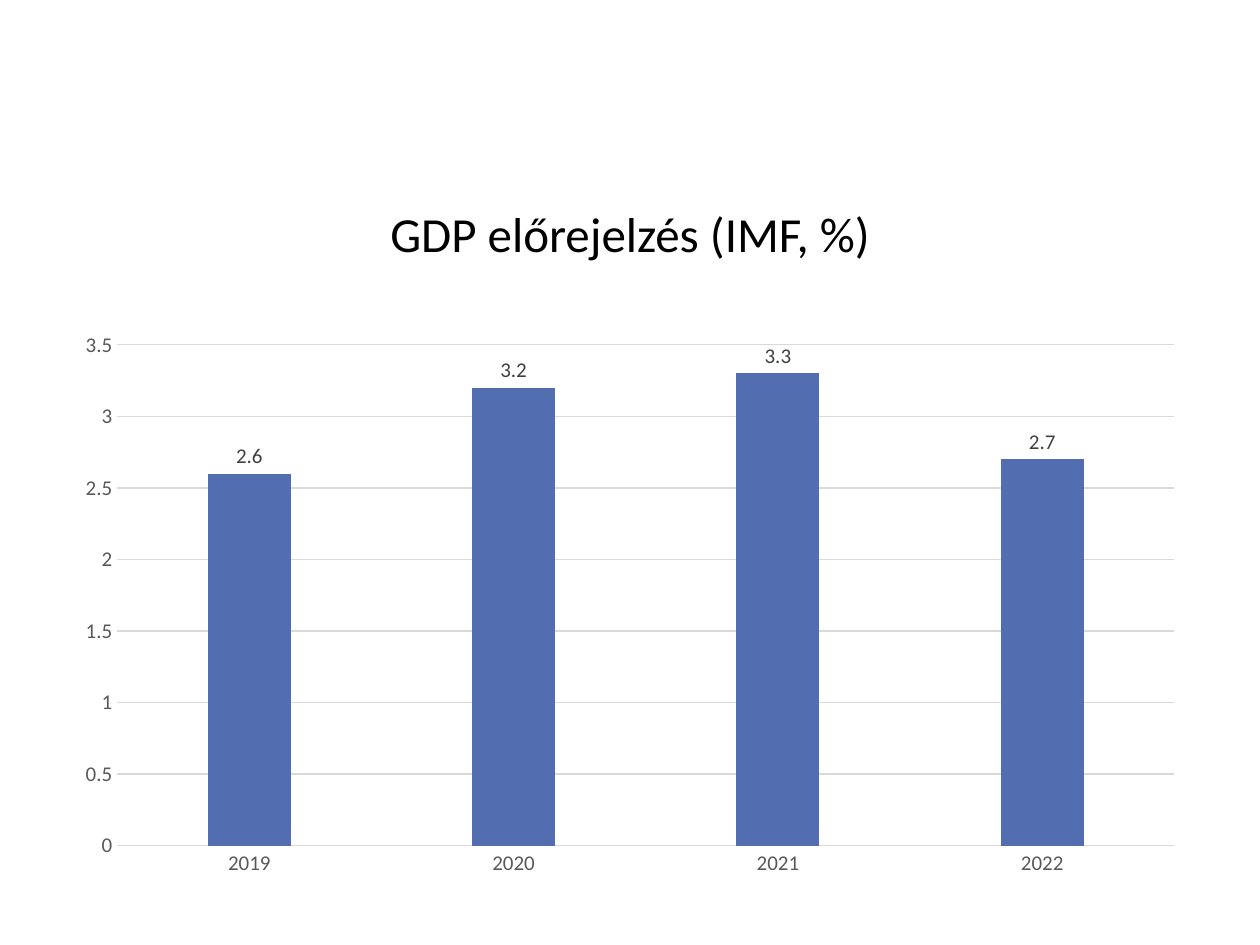
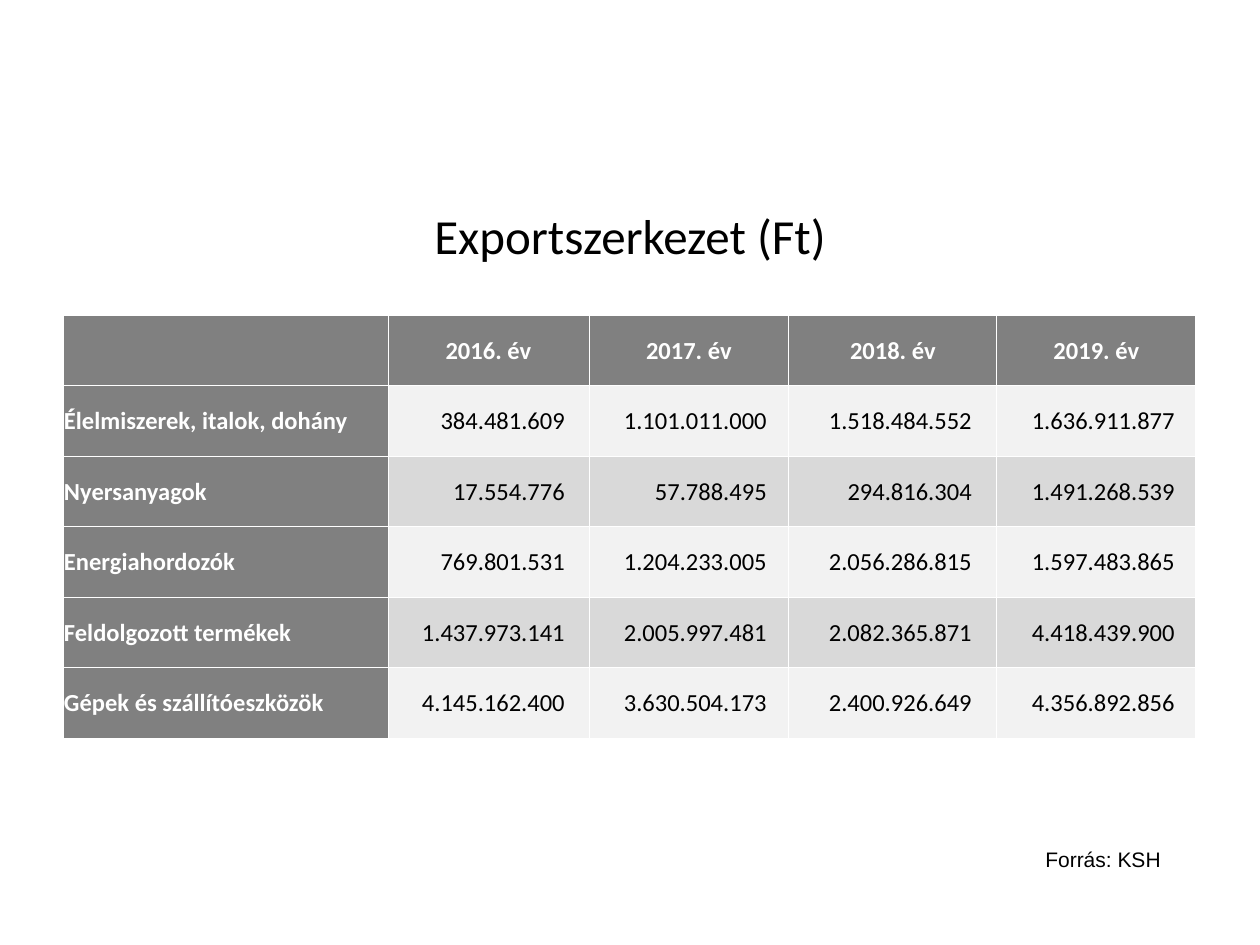
from lxml import etree
from pptx import Presentation, util as u
from pptx.chart.data import CategoryChartData
from pptx.dml.color import RGBColor
from pptx.enum import chart as ch, text
from pptx.oxml import ns

PX_PER_INCH = 126
BLACK = RGBColor(0x00, 0x00, 0x00)
WHITE = RGBColor(0xFF, 0xFF, 0xFF)
HEADER_GRAY = RGBColor(0x80, 0x80, 0x80)
LIGHT_BAND = RGBColor(0xF2, 0xF2, 0xF2)
DARK_BAND = RGBColor(0xD9, 0xD9, 0xD9)
GRID_GRAY = RGBColor(0xD9, 0xD9, 0xD9)
AXIS_GRAY = RGBColor(0x59, 0x59, 0x59)
LABEL_GRAY = RGBColor(0x40, 0x40, 0x40)
BAR_BLUE = RGBColor(0x52, 0x6D, 0xB0)
BODY_FONT = "Calibri"
SOURCE_FONT = "Arial"

GDP_FORECAST = {"2019": 2.6, "2020": 3.2, "2021": 3.3, "2022": 2.7}

EXPORT_YEARS = ["2016. év", "2017. év", "2018. év", "2019. év"]
EXPORTS = [
    ("Élelmiszerek, italok, dohány",
     "384.481.609", "1.101.011.000", "1.518.484.552", "1.636.911.877"),
    ("Nyersanyagok",
     "17.554.776", "57.788.495", "294.816.304", "1.491.268.539"),
    ("Energiahordozók",
     "769.801.531", "1.204.233.005", "2.056.286.815", "1.597.483.865"),
    ("Feldolgozott termékek",
     "1.437.973.141", "2.005.997.481", "2.082.365.871", "4.418.439.900"),
    ("Gépek és szállítóeszközök",
     "4.145.162.400", "3.630.504.173", "2.400.926.649", "4.356.892.856"),
]
COLUMN_WIDTHS = [325, 201, 200, 208, 199]
NUMBER_MARGINS = [24, 22, 25, 21]


def px(length):
    return u.Emu(round(length * 914400 / PX_PER_INCH))


def style_font(font, size, color, name=BODY_FONT, bold=False):
    font.size = u.Pt(size)
    font.name = name
    font.bold = bold
    font.color.rgb = color


def add_run(paragraph, words, size, color, name=BODY_FONT, bold=False):
    run = paragraph.add_run()
    run.text = words
    style_font(run.font, size, color, name, bold)


def add_text(slide, box, words, size, name=BODY_FONT,
             align=text.PP_ALIGN.LEFT, anchor=text.MSO_ANCHOR.TOP):
    frame = slide.shapes.add_textbox(*map(px, box)).text_frame
    frame.word_wrap = True
    frame.vertical_anchor = anchor
    paragraph = frame.paragraphs[0]
    paragraph.alignment = align
    add_run(paragraph, words, size, BLACK, name)


def add_title(slide, box, words):
    add_text(slide, box, words, 28, align=text.PP_ALIGN.CENTER,
             anchor=text.MSO_ANCHOR.MIDDLE)


def add_forecast_chart(slide, box):
    data = CategoryChartData()
    data.categories = list(GDP_FORECAST)
    data.add_series("Series 1", list(GDP_FORECAST.values()))
    chart = slide.shapes.add_chart(
        ch.XL_CHART_TYPE.COLUMN_CLUSTERED, *map(px, box), data).chart
    chart.has_legend = False
    chart.has_title = False
    style_font(chart.font, 10, BLACK)

    # Axes and grid
    for axis in (chart.category_axis, chart.value_axis):
        axis.major_tick_mark = axis.minor_tick_mark = ch.XL_TICK_MARK.NONE
        style_font(axis.tick_labels.font, 12, AXIS_GRAY)
    chart.value_axis.format.line.fill.background()
    chart.value_axis.has_major_gridlines = True
    for line in (chart.category_axis.format.line,
                 chart.value_axis.major_gridlines.format.line):
        line.color.rgb = GRID_GRAY
        line.width = u.Pt(0.75)

    # Columns and their values
    plot = chart.plots[0]
    plot.gap_width = 219
    plot.overlap = -27
    plot.vary_by_categories = False
    series = plot.series[0]
    series.format.fill.solid()
    series.format.fill.fore_color.rgb = BAR_BLUE
    labels = series.data_labels
    labels.show_value = True
    labels.position = ch.XL_LABEL_POSITION.OUTSIDE_END
    style_font(labels.font, 12, LABEL_GRAY)


def style_cell(cell, fill):
    properties = cell._tc.get_or_add_tcPr()
    for side in ("a:lnL", "a:lnR", "a:lnT", "a:lnB"):
        border = etree.SubElement(properties, ns.qn(side), w=str(u.Pt(0.5)))
        solid = etree.SubElement(border, ns.qn("a:solidFill"))
        etree.SubElement(solid, ns.qn("a:srgbClr"), val=str(WHITE))
    cell.fill.solid()
    cell.fill.fore_color.rgb = fill
    cell.vertical_anchor = text.MSO_ANCHOR.MIDDLE
    cell.margin_left = cell.margin_right = cell.margin_top = px(1)
    cell.margin_bottom = 0


def add_export_table(slide, box):
    rows = [("", *EXPORT_YEARS), *EXPORTS]
    table = slide.shapes.add_table(
        len(rows), len(COLUMN_WIDTHS), *map(px, box)).table
    table.first_row = table.horz_banding = False
    for column, width in zip(table.columns, COLUMN_WIDTHS):
        column.width = px(width)
    for row_index, row in enumerate(rows):
        table.rows[row_index].height = px(box[3] / len(rows))
        for column_index, words in enumerate(row):
            cell = table.cell(row_index, column_index)
            is_header = row_index == 0 or column_index == 0
            band = LIGHT_BAND if row_index % 2 else DARK_BAND
            style_cell(cell, HEADER_GRAY if is_header else band)
            if not words:
                continue
            paragraph = cell.text_frame.paragraphs[0]
            add_run(paragraph, words, 14, WHITE if is_header else BLACK,
                    bold=is_header)
            if row_index == 0:
                paragraph.alignment = text.PP_ALIGN.CENTER
            elif column_index > 0:
                paragraph.alignment = text.PP_ALIGN.RIGHT
                cell.margin_right = px(NUMBER_MARGINS[column_index - 1])


def build_forecast_slide(slide):
    add_title(slide, (63, 185, 1134, 96), "GDP előrejelzés (IMF, %)")
    add_forecast_chart(slide, (63, 321, 1134, 566))


def build_export_slide(slide):
    add_title(slide, (63, 198, 1134, 74), "Exportszerkezet (Ft)")
    add_text(slide, (1033, 840, 164, 38), "Forrás: KSH", 12, SOURCE_FONT)
    add_export_table(slide, (63, 315, sum(COLUMN_WIDTHS), 423))


def main():
    presentation = Presentation()
    presentation.slide_width = px(1260)
    presentation.slide_height = px(945)
    blank = presentation.slide_layouts[6]
    for build in (build_forecast_slide, build_export_slide):
        build(presentation.slides.add_slide(blank))
    presentation.save("out.pptx")


if __name__ == "__main__":
    main()
